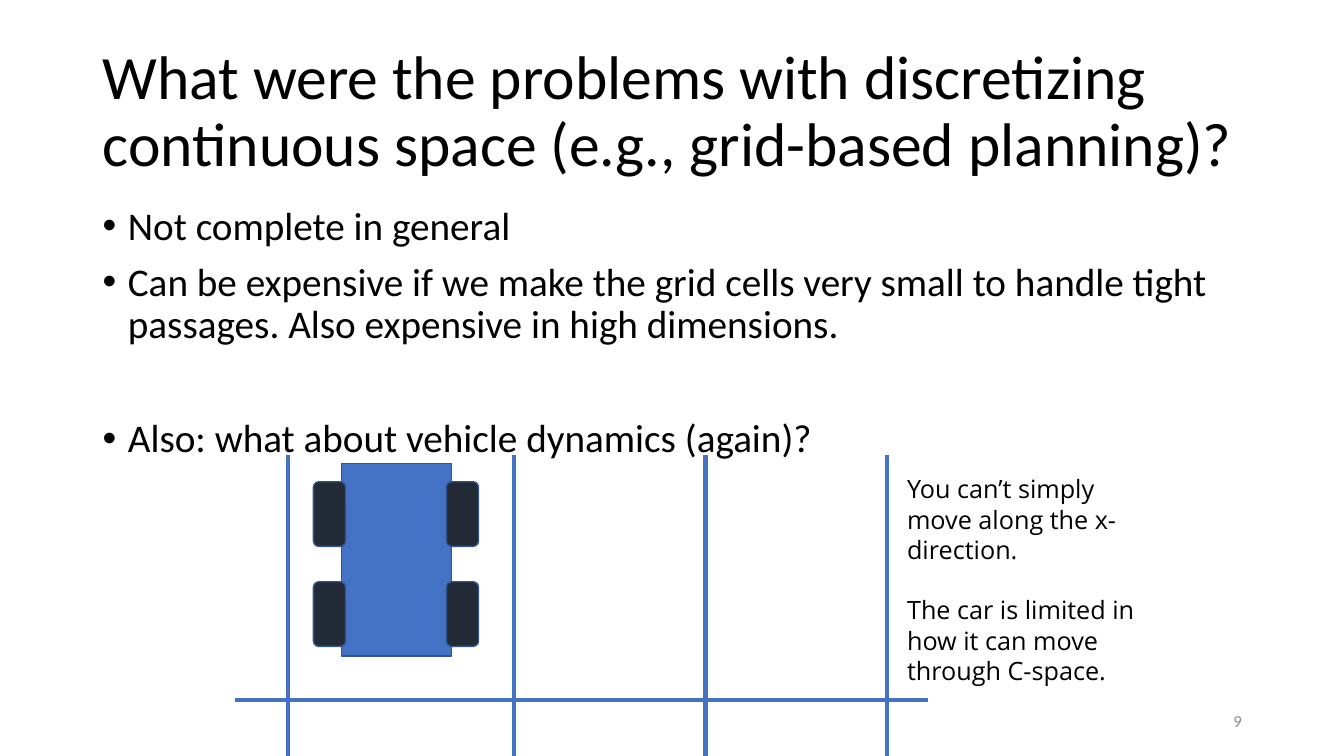
"""Build a slide on the limits of grid-based planning."""
from dataclasses import dataclass

from lxml.etree import SubElement
from pptx import Presentation
from pptx.dml.color import RGBColor as Rgb
from pptx.enum.shapes import MSO_CONNECTOR as Link, MSO_SHAPE as Form
from pptx.enum.text import MSO_ANCHOR as Anchor, MSO_AUTO_SIZE as Fit, PP_ALIGN as Align
from pptx.oxml.ns import qn
from pptx.util import Cm, Pt


@dataclass(frozen=True)
class Theme:
    """Hold the colours, fonts and type sizes."""
    ink: str = "000000"
    mute: str = "8C8C8C"
    blue: str = "4472C4"
    edge: str = "325491"
    tire: str = "222A35"
    main: str = "Calibri"
    side: str = "Open Sans"
    head: int = 44
    body: int = 28
    note: int = 18
    page: int = 12


LOOK = Theme()


def apply(item, form):
    """Set each value of a format dict on an item."""
    for name, value in form.items():
        setattr(item, name, value)


def place(shape, left, top, width, height):
    """Move and size a shape in centimetres."""
    apply(shape, {"left": Cm(left), "top": Cm(top),
                  "width": Cm(width), "height": Cm(height)})


def style(para, size, face=LOOK.main, color=LOOK.ink, **form):
    """Format a paragraph and its font."""
    apply(para, form)
    apply(para.font, {"size": Pt(size), "name": face})
    para.font.color.rgb = Rgb.from_string(color)


def frame(shape, anchor=Anchor.TOP):
    """Give a shape a wrapping text frame of fixed size."""
    text = shape.text_frame
    apply(text, {"word_wrap": True, "auto_size": Fit.NONE,
                 "vertical_anchor": anchor})
    return text


def write(text, lines):
    """Fill a text frame and return its paragraphs."""
    text.text = "\n".join(lines)
    return text.paragraphs


def title(slide, words):
    """Fill the title placeholder."""
    shape = slide.shapes.title
    place(shape, 2.33, 1.01, 29.21, 3.68)
    para, = write(frame(shape, Anchor.MIDDLE), [words])
    style(para, LOOK.head, alignment=Align.LEFT, line_spacing=0.9)


def points(slide, items):
    """Fill the body placeholder from (text, space before) pairs."""
    shape = slide.placeholders[1]
    place(shape, 2.33, 5.07, 29.21, 12.09)
    paras = write(frame(shape), [words for words, _ in items])
    for para, (_, gap) in zip(paras, items):
        prop = para._p.get_or_add_pPr()
        prop.set("marL", str(Cm(0.64)))
        prop.set("indent", str(-Cm(0.64)))
        SubElement(prop, qn("a:buFont"), typeface="Arial")
        SubElement(prop, qn("a:buChar"), char="•")
        style(para, LOOK.body, line_spacing=0.9, space_before=Pt(gap))


def label(slide, box, lines, anchor=Anchor.TOP):
    """Add a text box and return its paragraphs."""
    shape = slide.shapes.add_textbox(*map(Cm, box))
    return write(frame(shape, anchor), lines)


def block(group, form, box, fill):
    """Add a filled shape with a thin edge."""
    shape = group.shapes.add_shape(form, *map(Cm, box))
    shape.shadow.inherit = False
    shape.fill.solid()
    shape.fill.fore_color.rgb = Rgb.from_string(fill)
    shape.line.color.rgb = Rgb.from_string(LOOK.edge)
    shape.line.width = Pt(1)


def car(slide):
    """Draw the car body and its four wheels."""
    group = slide.shapes.add_group_shape()
    block(group, Form.RECTANGLE, (8.61, 11.68, 2.77, 4.85), LOOK.blue)
    for top in (12.14, 14.66):
        for left in (7.9, 11.25):
            block(group, Form.ROUNDED_RECTANGLE, (left, top, 0.81, 1.63), LOOK.tire)


def rule(slide, *ends):
    """Draw one grid line."""
    line = slide.shapes.add_connector(Link.STRAIGHT, *map(Cm, ends))
    line.line.color.rgb = Rgb.from_string(LOOK.blue)
    line.line.width = Pt(3)
    SubElement(line._element.spPr, qn("a:effectLst"))


def grid(slide):
    """Draw the grid around the car."""
    for left in (7.26, 12.95, 17.78, 22.35):
        rule(slide, left, 11.46, left, 19.05)
    rule(slide, 5.92, 17.63, 23.39, 17.63)


def note(slide, lines):
    """Add the remark beside the grid, one line apart."""
    pitch = Pt(21.6)
    paras = label(slide, (22.61, 11.81, 6.55, 5.64), lines)
    for rank, para in enumerate(paras):
        style(para, LOOK.note, LOOK.side, line_spacing=pitch,
              space_before=pitch if rank else Pt(0))


def page(slide, mark):
    """Add the page number."""
    para, = label(slide, (23.93, 17.66, 7.62, 1.02), [mark], Anchor.MIDDLE)
    style(para, LOOK.page, color=LOOK.mute, alignment=Align.RIGHT)


def main():
    """Build and save the slide."""
    deck = Presentation()
    apply(deck, {"slide_width": Cm(33.87), "slide_height": Cm(19.05)})
    slide = deck.slides.add_slide(deck.slide_layouts[1])
    title(slide, "What were the problems with discretizing continuous space "
                 "(e.g., grid-based planning)?")
    points(slide, [
        ("Not complete in general", 0),
        ("Can be expensive if we make the grid cells very small to handle "
         "tight passages. Also expensive in high dimensions.", 10),
        ("Also: what about vehicle dynamics (again)?", 51),
    ])
    page(slide, "9")
    car(slide)
    grid(slide)
    note(slide, ["You can’t simply move along the x-direction.",
                 "The car is limited in how it can move through C-space."])
    deck.save("out.pptx")


if __name__ == "__main__":
    main()
